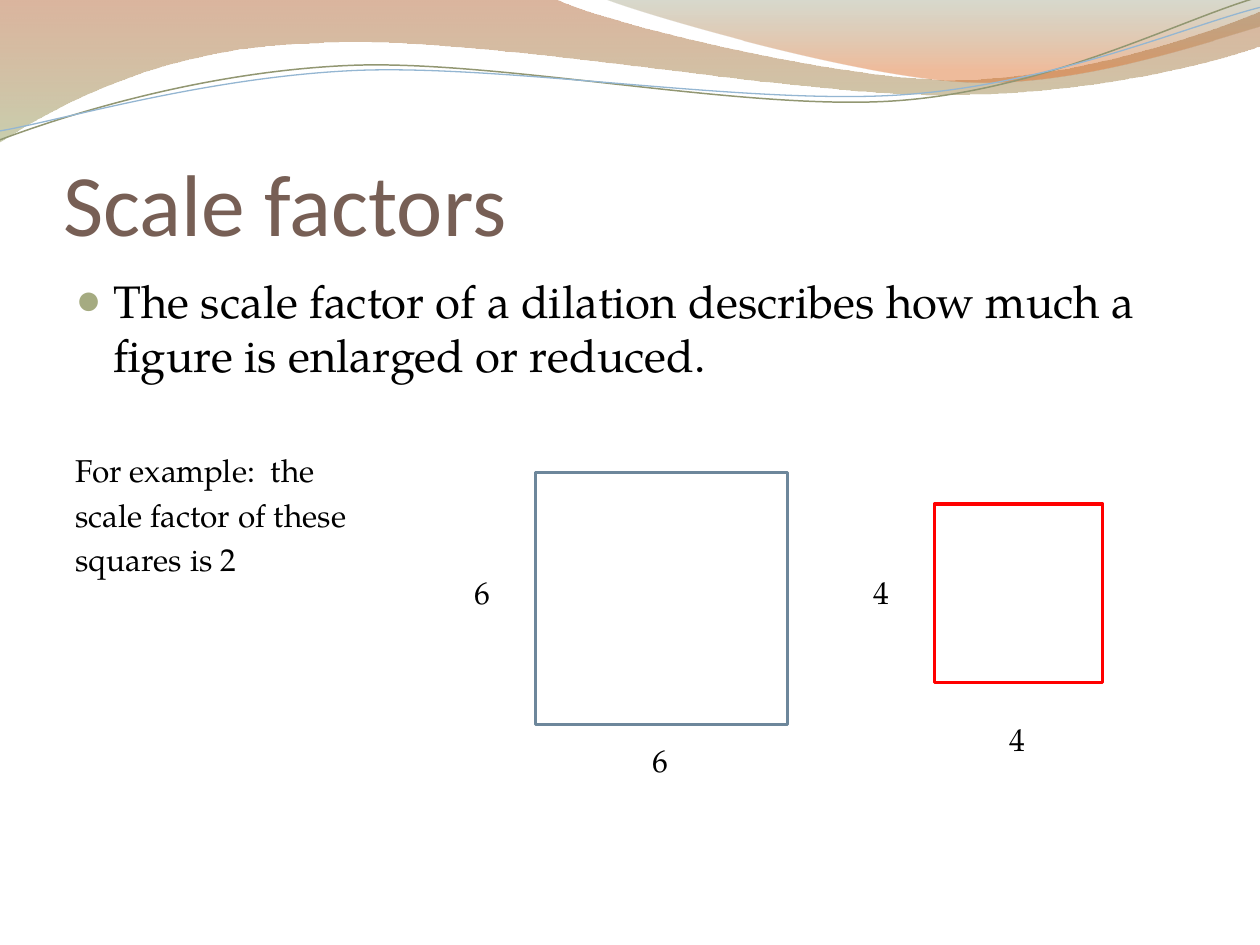
from lxml import etree
from pptx import Presentation
from pptx import util as u
from pptx.dml.color import RGBColor
from pptx.enum import shapes, text
from pptx.oxml import ns

BLACK = RGBColor(0x00, 0x00, 0x00)
WHITE = RGBColor(0xFF, 0xFF, 0xFF)
BROWN = RGBColor(0x77, 0x5F, 0x55)
SLATE = RGBColor(0x6D, 0x87, 0x9B)
RED = RGBColor(0xFF, 0x00, 0x00)
RUST = RGBColor(0xAF, 0x5C, 0x29)
GREEN = RGBColor(0x9D, 0xA6, 0x6B)
MOSS = RGBColor(0x7D, 0x83, 0x5B)
ORANGE = RGBColor(0xDD, 0x6B, 0x24)
OLIVE = RGBColor(0x92, 0x97, 0x72)
BLUE = RGBColor(0x94, 0xB6, 0xD2)
BULLET = RGBColor(0xA5, 0xAB, 0x81)
HEAD_FONT = "Calibri"
BODY_FONT = "TeX Gyre Pagella"

WAVES = [
    ([(0, 0), (11.18, -0.03), (12.09, 0.43, 16.87, 1.6, 19.25, 1.6),
      (21.67, 1.6, 24.33, 0.66, 25.4, 0.23), (25.43, 0.91),
      (24.97, 1.12, 22.1, 1.93, 18.95, 1.91), (15.8, 1.91, 9.7, 0.71, 6.53, 0.86),
      (3.28, 0.91, 1.17, 2.11, -0.03, 2.87)],
     [(0, RUST, 45), (1, GREEN, 55)]),
    ([(12.17, -0.03), (12.93, 0.28, 17.32, 1.57, 19.53, 1.65),
      (21.74, 1.75, 24.41, 0.81, 25.4, 0.53), (25.4, 0)],
     [(0, MOSS, 30), (0.8, ORANGE, 45)]),
]
STRANDS = [
    ([(0, 2.82), (1.22, 2.36, 4.01, 1.45, 7.04, 1.32),
      (10.03, 1.19, 15.06, 2.26, 18.11, 2.03),
      (21.16, 1.8, 23.83, 0.38, 25.35, -0.05)], OLIVE, 0.85),
    ([(0, 2.64), (1.19, 2.44, 4.17, 1.55, 7.19, 1.42),
      (10.24, 1.3, 15.16, 2.13, 18.21, 1.91),
      (21.23, 1.7, 23.9, 0.53, 25.4, 0.15)], BLUE, 0.75),
]


def add_path(s, box, segments, close):
    """Draw a freeform of lines and cubic curves, offset by the box corner."""
    pts = [(u.Cm(box[0] + seg[i]), u.Cm(box[1] + seg[i + 1]))
           for seg in segments for i in range(0, len(seg), 2)]
    fb = s.shapes.build_freeform(*pts[0])
    fb.add_line_segments(pts[1:], close=close)
    sp = fb.convert_to_shape()
    sp.shadow.inherit = False
    lines = iter(list(sp._element.iter(ns.qn("a:lnTo"))))
    for seg in segments[1:]:
        first = next(lines)
        if len(seg) == 6:
            curve = etree.Element(ns.qn("a:cubicBezTo"))
            first.addprevious(curve)
            for ln in (first, next(lines), next(lines)):
                curve.append(ln[0])
                ln.getparent().remove(ln)
    return sp


def add_banner(s, box):
    """Draw the gradient waves and thin strands behind everything else."""
    parts = []
    for segments, stops in WAVES:
        sp = add_path(s, box, segments, True)
        sp.line.fill.background()
        sp.fill.gradient()
        sp.fill.gradient_angle = 270
        for stop, (pos, color, _) in zip(sp.fill.gradient_stops, stops):
            stop.position = pos
            stop.color.rgb = color
        for clr, (_, _, alpha) in zip(sp._element.iter(ns.qn("a:srgbClr")), stops):
            etree.SubElement(clr, ns.qn("a:alpha"), val=str(alpha * 1000))
        parts.append(sp)
    for segments, color, width in STRANDS:
        sp = add_path(s, box, segments, False)
        sp.fill.background()
        sp.line.color.rgb = color
        sp.line.width = u.Pt(width)
        parts.append(sp)
    for sp in parts:
        s.shapes.title._element.addprevious(sp._element)


def add_run(p, words, size, font=BODY_FONT, color=BLACK):
    """Append a formatted run to a paragraph."""
    r = p.add_run()
    r.text = words
    r.font.size = u.Pt(size)
    r.font.name = font
    r.font.color.rgb = color


def place(sp, box):
    """Move and size a shape to a box in centimetres."""
    sp.left, sp.top, sp.width, sp.height = (u.Cm(v) for v in box)


def add_title(s, box):
    """Fill the title placeholder."""
    sp = s.shapes.title
    place(sp, box)
    tf = sp.text_frame
    tf.margin_left = tf.margin_right = tf.margin_bottom = 0
    tf.vertical_anchor = text.MSO_ANCHOR.BOTTOM
    p = tf.paragraphs[0]
    p.alignment = text.PP_ALIGN.LEFT
    add_run(p, "Scale factors", 50, HEAD_FONT, BROWN)


def set_bullet(p, char=None):
    """Give a paragraph a hanging indent and an optional bullet."""
    pPr = p._p.get_or_add_pPr()
    pPr.set("marL", str(u.Cm(0.76)))
    pPr.set("indent", str(-u.Cm(0.76)))
    if char is None:
        etree.SubElement(pPr, ns.qn("a:buNone"))
        return
    clr = etree.SubElement(pPr, ns.qn("a:buClr"))
    etree.SubElement(clr, ns.qn("a:srgbClr"), val=str(BULLET))
    etree.SubElement(pPr, ns.qn("a:buSzPct"), val="95000")
    etree.SubElement(pPr, ns.qn("a:buChar"), char=char)


def add_body(s, box):
    """Fill the body placeholder with the definition and the example."""
    sp = s.placeholders[1]
    place(sp, box)
    tf = sp.text_frame
    lines = [
        ("The scale factor of a dilation describes how much a figure is enlarged or reduced.",
         26, 5.2, "●"),
        ("For example:  the", 18, 39.8, None),
        ("scale factor of these", 18, 3.6, None),
        ("squares is 2", 18, 3.6, None),
    ]
    for i, (words, size, before, char) in enumerate(lines):
        p = tf.add_paragraph() if i else tf.paragraphs[0]
        p.space_before = u.Pt(before)
        set_bullet(p, char)
        add_run(p, words, size)


def add_square(s, box, color, label, offsets):
    """Draw an outlined square with its side labels at offsets from its corner."""
    sp = s.shapes.add_shape(shapes.MSO_SHAPE.RECTANGLE, *(u.Cm(v) for v in box))
    sp.shadow.inherit = False
    sp.fill.solid()
    sp.fill.fore_color.rgb = WHITE
    sp.line.color.rgb = color
    sp.line.width = u.Pt(2)
    for dx, dy in offsets:
        tb = s.shapes.add_textbox(u.Cm(box[0] + dx), u.Cm(box[1] + dy), u.Cm(1.06), u.Cm(1.03))
        tf = tb.text_frame
        tf.word_wrap = True
        add_run(tf.paragraphs[0], label, 18)


def main():
    """Build the slide and save it."""
    prs = Presentation()
    prs.slide_width, prs.slide_height = u.Cm(25.4), u.Cm(19.05)
    s = prs.slides.add_slide(prs.slide_layouts[1])
    add_banner(s, (0, 0))
    add_title(s, (1.27, 1.95, 22.86, 3.17))
    add_body(s, (1.27, 5.37, 22.86, 12.19))
    add_square(s, (10.8, 9.53, 5.08, 5.08), SLATE, "6", [(-1.48, 1.9), (2.11, 5.28)])
    add_square(s, (18.84, 10.16, 3.39, 3.6), RED, "4", [(-1.48, 1.27), (1.27, 4.24)])
    prs.save("out.pptx")


if __name__ == "__main__":
    main()
